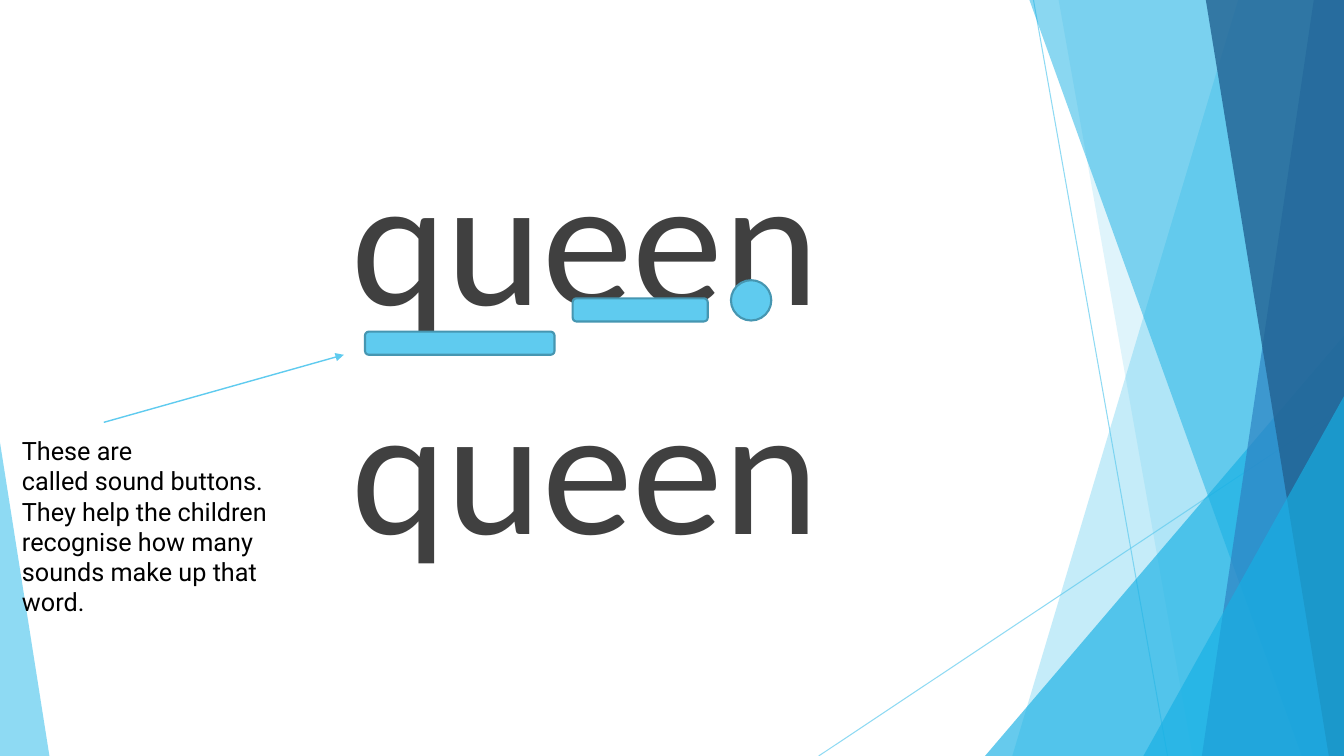
from lxml.etree import SubElement
from pptx import Presentation
from pptx.dml.color import RGBColor
from pptx.enum.shapes import MSO_CONNECTOR, MSO_SHAPE
from pptx.enum.text import MSO_ANCHOR, PP_ALIGN
from pptx.oxml.ns import qn
from pptx.util import Inches, Pt

WIDTH, HEIGHT = 13.33, 7.5
COLORS = {
    "sky": "5FCBEF",
    "cyan": "17B0E4",
    "blue": "2E83C3",
    "navy": "226292",
    "outline": "4696B1",
    "word": "404040",
    "note": "000000",
}


def rgb(name):
    return RGBColor.from_string(COLORS[name])


def set_alpha(sp, percent):
    color = next(sp._element.spPr.iter(qn("a:srgbClr")))
    SubElement(color, qn("a:alpha"), val=str(percent * 1000))


def paint(sp, color, alpha=None, outline=None):
    sp.shadow.inherit = False
    sp.fill.solid()
    sp.fill.fore_color.rgb = rgb(color)
    if alpha:
        set_alpha(sp, alpha)
    if outline:
        sp.line.color.rgb = rgb(outline)
        sp.line.width = Pt(1.5)
    else:
        sp.line.fill.background()


def add_facet(s, top_x, bottom_x, color, alpha):
    corners = [(top_x, 0), (WIDTH, 0), (WIDTH, HEIGHT), (bottom_x, HEIGHT)]
    points = [(Inches(x), Inches(y)) for x, y in corners]
    builder = s.shapes.build_freeform(*points[0])
    builder.add_line_segments(points[1:], close=True)
    paint(builder.convert_to_shape(), color, alpha)


def add_corner(s, left, top, width, apex, color, alpha):
    sp = s.shapes.add_shape(MSO_SHAPE.ISOSCELES_TRIANGLE, Inches(left), Inches(top),
                            Inches(width), Inches(HEIGHT - top))
    sp.adjustments[0] = apex
    paint(sp, color, alpha)


def add_line(s, start, end, width, alpha=None, arrow=False):
    sp = s.shapes.add_connector(MSO_CONNECTOR.STRAIGHT, *map(Inches, start + end))
    sp.line.color.rgb = rgb("sky")
    sp.line.width = Pt(width)
    if alpha:
        set_alpha(sp, alpha)
    if arrow:
        SubElement(sp.line._get_or_add_ln(), qn("a:tailEnd"), type="triangle")
    SubElement(sp._element.spPr, qn("a:effectLst"))


def add_button(s, kind, left, top, width, height):
    sp = s.shapes.add_shape(kind, *map(Inches, (left, top, width, height)))
    paint(sp, "sky", outline="outline")


def add_text(s, box, lines, font, align=PP_ALIGN.LEFT, gap=0, inset=0.05):
    tf = s.shapes.add_textbox(*map(Inches, box)).text_frame
    frame = {"word_wrap": True, "vertical_anchor": MSO_ANCHOR.TOP, "margin_top": Inches(inset)}
    for name, value in frame.items():
        setattr(tf, name, value)
    for i, line in enumerate(lines):
        p = tf.add_paragraph() if i else tf.paragraphs[0]
        p.alignment = align
        p.space_before = Pt(gap if i else 0)
        r = p.add_run()
        r.text = line
        for name, value in font.items():
            if name == "color":
                r.font.color.rgb = rgb(value)
            else:
                setattr(r.font, name, value)


def add_backdrop(s):
    add_line(s, (10.25, 0), (11.58, HEIGHT), 0.75, alpha=70)
    add_line(s, (WIDTH, 4.03), (8.12, HEIGHT), 0.75, alpha=70)
    add_facet(s, 12.28, 10.04, "sky", 36)
    add_facet(s, 10.5, 11.83, "sky", 20)
    add_corner(s, 9.77, 3.33, 3.56, 1, "cyan", 66)
    add_facet(s, 10.21, 12.91, "cyan", 50)
    add_facet(s, 13.03, 11.92, "blue", 70)
    add_facet(s, 11.96, 13.18, "navy", 80)
    add_corner(s, 11.34, 3.93, 1.99, 1, "cyan", 66)
    add_corner(s, 0, 4.39, 0.49, 0, "sky", 70)


def main():
    prs = Presentation()
    prs.slide_width, prs.slide_height = Inches(WIDTH), Inches(HEIGHT)
    s = prs.slides.add_slide(prs.slide_layouts[6])
    add_backdrop(s)
    add_text(s, (1, 1.08, 9.61, 5.53), ["queen"] * 2,
             {"name": "Calibri", "size": Pt(130), "color": "word"},
             align=PP_ALIGN.CENTER, gap=7, inset=0.15)
    add_button(s, MSO_SHAPE.OVAL, 7.25, 2.78, 0.4, 0.4)
    add_button(s, MSO_SHAPE.ROUNDED_RECTANGLE, 3.62, 3.29, 1.88, 0.23)
    add_button(s, MSO_SHAPE.ROUNDED_RECTANGLE, 5.68, 2.96, 1.34, 0.23)
    add_line(s, (1.03, 4.19), (3.41, 3.52), 1, arrow=True)
    note = ["These are", "called sound buttons.", "They help the children",
            "recognise how many sounds make up that word."]
    add_text(s, (0.12, 4.27, 3, 1.92), note,
             {"name": "Roboto", "size": Pt(18), "color": "note"})
    prs.save("out.pptx")


if __name__ == "__main__":
    main()
